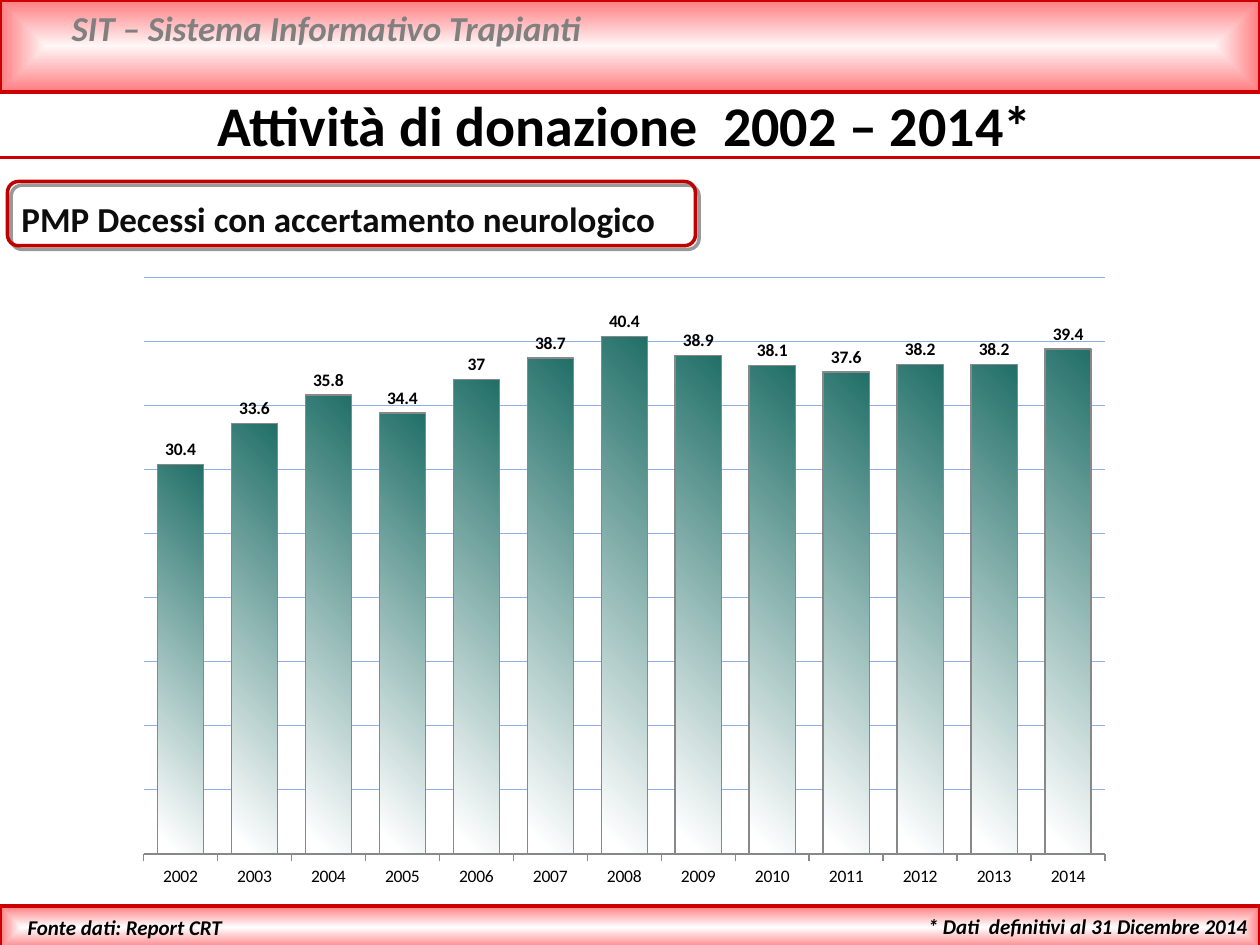
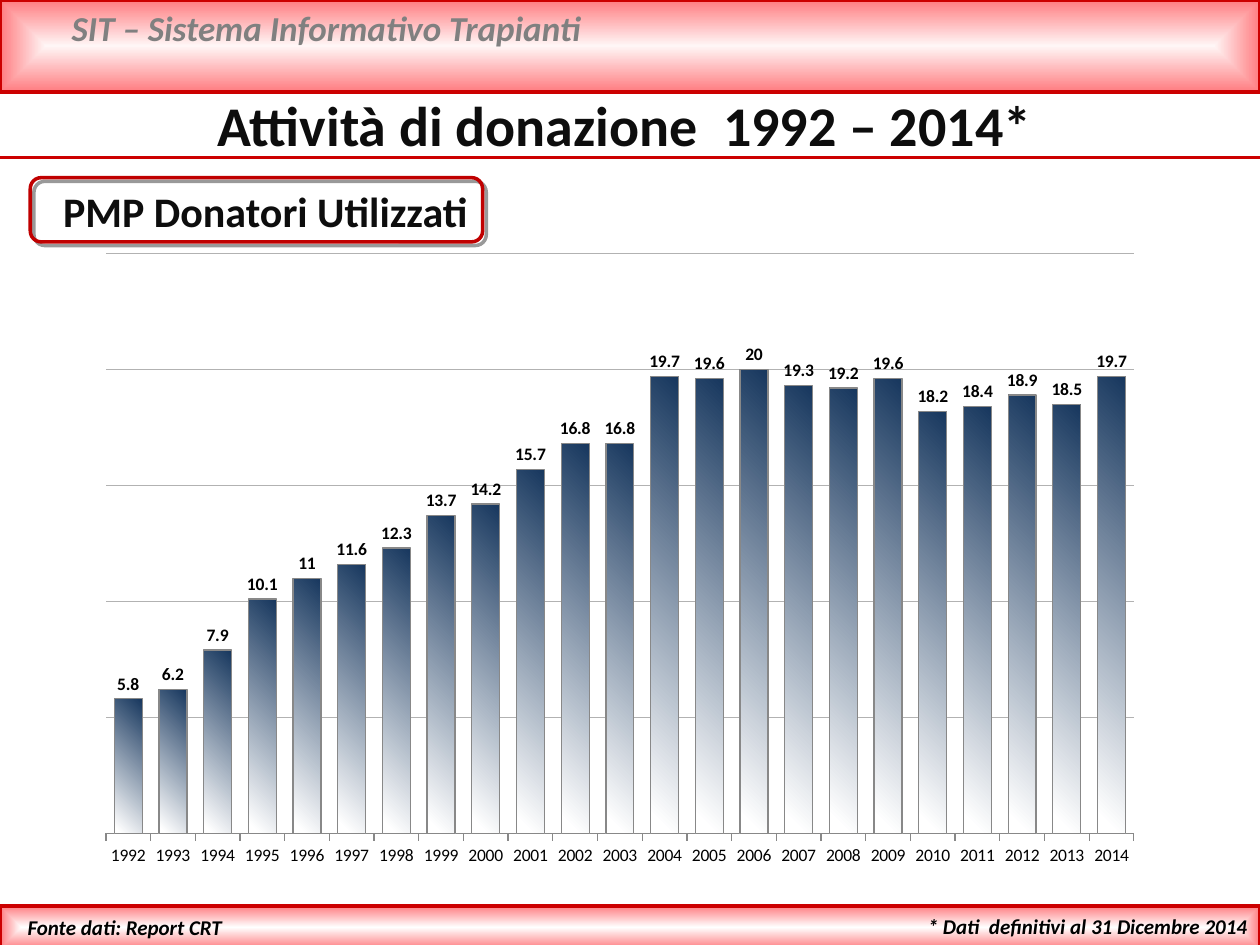
from lxml.etree import SubElement
from pptx import Presentation
from pptx.chart.data import CategoryChartData
from pptx.dml.color import RGBColor
from pptx.enum.chart import XL_CHART_TYPE, XL_LABEL_POSITION, XL_TICK_LABEL_POSITION, XL_TICK_MARK
from pptx.enum.shapes import MSO_CONNECTOR, MSO_SHAPE
from pptx.enum.text import MSO_ANCHOR, PP_ALIGN
from pptx.oxml.ns import qn
from pptx.util import Inches, Pt

FONT = "Calibri"
COLORS = {name: RGBColor.from_string(value) for name, value in {
    "black": "000000", "ink": "0D0D0D", "gray": "808080", "white": "FFFFFF",
    "red": "CC0000", "label red": "C00000", "pink": "FF7C80", "pale pink": "FFF6F6",
    "axis": "888888", "teal": "216F68", "navy": "17375E",
    "blue grid": "8FAFE6", "gray grid": "B2B2B2",
}.items()}

presentation = Presentation()
presentation.slide_width, presentation.slide_height = Inches(10), Inches(7.5)
blank_layout = presentation.slide_layouts[6]
for placeholder in list(blank_layout.placeholders):
    blank_layout.shapes.element.remove(placeholder.element)


def place(left, top, width, height):
    """Turn percentages of the slide's size into lengths."""
    across, down = presentation.slide_width / 100, presentation.slide_height / 100
    return [round(length) for length in (left * across, top * down, width * across, height * down)]


def add_text(slide, box, text, size, color, align=PP_ALIGN.LEFT, italic=False):
    shape = slide.shapes.add_textbox(*place(*box))
    shape.text_frame.word_wrap = True
    paragraph = shape.text_frame.paragraphs[0]
    paragraph.alignment = align
    run = paragraph.add_run()
    run.text = text
    run.font.name, run.font.size = FONT, Pt(size)
    run.font.bold, run.font.italic = True, italic
    run.font.color.rgb = COLORS[color]
    return shape


pages = [
    {
        "title": "Attività di donazione  2002 – 2014*", "title color": "black",
        "label": "PMP Decessi con accertamento neurologico", "label size": 20,
        "label text": (0, 19.2, 55.5, 6.8), "label frame": (0.6, 19.2, 54.6, 6.8),
        "label indent": 0.17,
        "chart": (9.8, 28, 79.5, 67.07), "first year": 2002, "maximum": 45,
        "bar": "teal", "grid": "blue grid",
        "values": [30.4, 33.6, 35.8, 34.4, 37, 38.7, 40.4, 38.9, 38.1, 37.6, 38.2, 38.2, 39.4],
    },
    {
        "title": "Attività di donazione  1992 – 2014*", "title color": "ink",
        "label": "PMP Donatori Utilizzati", "label size": 24,
        "label text": (2.5, 18.8, 36.5, 6.8), "label frame": (2.4, 18.8, 35.9, 6.8),
        "label indent": 0.25,
        "chart": (6.7, 25.47, 85, 67.47), "first year": 1992, "maximum": 25,
        "bar": "navy", "grid": "gray grid",
        "values": [5.8, 6.2, 7.9, 10.1, 11, 11.6, 12.3, 13.7, 14.2, 15.7, 16.8, 16.8,
                   19.7, 19.6, 20, 19.3, 19.2, 19.6, 18.2, 18.4, 18.9, 18.5, 19.7],
    },
]
slides = [presentation.slides.add_slide(blank_layout) for page in pages]

# Shared bands, rule and footers, drawn once and then moved to the layout
first_slide = slides[0]
for box, center in (((0, 0, 100, 9.73), "pale pink"), ((0, 95.87, 100, 4.53), "white")):
    band = first_slide.shapes.add_shape(MSO_SHAPE.RECTANGLE, *place(*box))
    band.shadow.inherit = False
    band.line.color.rgb, band.line.width = COLORS["red"], Pt(2)
    band.fill.gradient()
    for stop, color in zip(band.fill.gradient_stops, (center, "pink")):
        stop.color.rgb = COLORS[color]
    first_stop, last_stop = band.fill.gradient_stops
    first_stop.position, last_stop.position = 0, 1
    gradient = band.element.spPr.find(qn("a:gradFill"))
    gradient.remove(gradient.find(qn("a:lin")))
    gradient_shape = SubElement(gradient, qn("a:path"), path="shape")
    SubElement(gradient_shape, qn("a:fillToRect"), l="50000", t="50000", r="50000", b="50000")

left, top, width, height = place(0, 16.67, 100, 0)
rule = first_slide.shapes.add_connector(MSO_CONNECTOR.STRAIGHT, left, top, left + width, top)
rule.line.color.rgb, rule.line.width = COLORS["red"], Pt(2)
SubElement(rule.element.spPr, qn("a:effectLst"))

add_text(first_slide, (4.7, 0, 89.8, 5.87), "SIT – Sistema Informativo Trapianti", 20, "gray",
         italic=True)
add_text(first_slide, (58.7, 96, 41.3, 4), "* Dati  definitivi al 31 Dicembre 2014", 12, "black",
         PP_ALIGN.RIGHT, italic=True)
add_text(first_slide, (1.2, 96.13, 32.1, 4), "Fonte dati: Report CRT", 12, "black", italic=True)

for shape in list(first_slide.shapes):
    blank_layout.shapes.element.append(shape.element)

for slide, page in zip(slides, pages):
    # Column chart
    data = CategoryChartData()
    data.categories = [str(page["first year"] + step) for step in range(len(page["values"]))]
    data.add_series("Series 1", page["values"])
    chart = slide.shapes.add_chart(XL_CHART_TYPE.COLUMN_CLUSTERED, *place(*page["chart"]), data).chart
    chart.has_legend = chart.has_title = False
    chart.font.name, chart.font.size = FONT, Pt(10)
    chart.font.color.rgb = COLORS["black"]

    # Plot area as shares of the chart
    plot_area = chart.element.find(".//" + qn("c:plotArea"))
    for old_layout in plot_area.findall(qn("c:layout")):
        plot_area.remove(old_layout)
    layout = SubElement(plot_area, qn("c:layout"))
    plot_area.insert(0, layout)
    manual = SubElement(layout, qn("c:manualLayout"))
    for tag, value in (("layoutTarget", "inner"), ("xMode", "edge"), ("yMode", "edge"),
                       ("x", "0.02"), ("y", "0.02"), ("w", "0.96"), ("h", "0.91")):
        SubElement(manual, qn("c:" + tag), val=value)

    # Axes
    years, rates = chart.category_axis, chart.value_axis
    years.major_tick_mark = XL_TICK_MARK.OUTSIDE
    years.tick_label_position = XL_TICK_LABEL_POSITION.LOW
    years.format.line.color.rgb, years.format.line.width = COLORS["axis"], Pt(0.75)
    rates.minimum_scale, rates.maximum_scale, rates.major_unit = 0, page["maximum"], 5
    rates.has_major_gridlines = True
    grid_line = rates.major_gridlines.format.line
    grid_line.color.rgb, grid_line.width = COLORS[page["grid"]], Pt(0.75)
    rates.visible = False

    # Columns and their values
    plot = chart.plots[0]
    plot.gap_width, plot.overlap, plot.vary_by_categories = 60, -20, False
    columns = plot.series[0].format
    columns.line.color.rgb, columns.line.width = COLORS["axis"], Pt(0.75)
    columns.fill.gradient()
    columns.fill.gradient_angle = 225
    for stop, color, position in zip(columns.fill.gradient_stops, (page["bar"], "white"), (0, 0.96)):
        stop.color.rgb, stop.position = COLORS[color], position
    plot.has_data_labels = True
    labels = plot.data_labels
    labels.show_value, labels.position = True, XL_LABEL_POSITION.OUTSIDE_END
    labels.font.name, labels.font.size, labels.font.bold = FONT, Pt(10), True
    labels.font.color.rgb = COLORS["black"]

    # Title
    add_text(slide, (0, 8.93, 99.2, 8.53), page["title"], 32, page["title color"], PP_ALIGN.CENTER)

    # Framed label
    label = add_text(slide, page["label text"], page["label"], page["label size"], "ink")
    label.text_frame.margin_left = Inches(page["label indent"])
    label.text_frame.margin_right = 0
    label.text_frame.vertical_anchor = MSO_ANCHOR.BOTTOM
    frame = slide.shapes.add_shape(MSO_SHAPE.ROUNDED_RECTANGLE, *place(*page["label frame"]))
    frame.adjustments[0] = 0.17
    frame.fill.background()
    frame.line.color.rgb, frame.line.width = COLORS["label red"], Pt(2)
    frame.shadow.inherit = False
    shadow = SubElement(frame.element.spPr.find(qn("a:effectLst")), qn("a:outerShdw"),
                        blurRad="0", dist=str(Pt(3)), dir="2700000", algn="tl", rotWithShape="0")
    shadow_color = SubElement(shadow, qn("a:srgbClr"), val=str(COLORS["black"]))
    SubElement(shadow_color, qn("a:alpha"), val="40000")

presentation.save("out.pptx")
